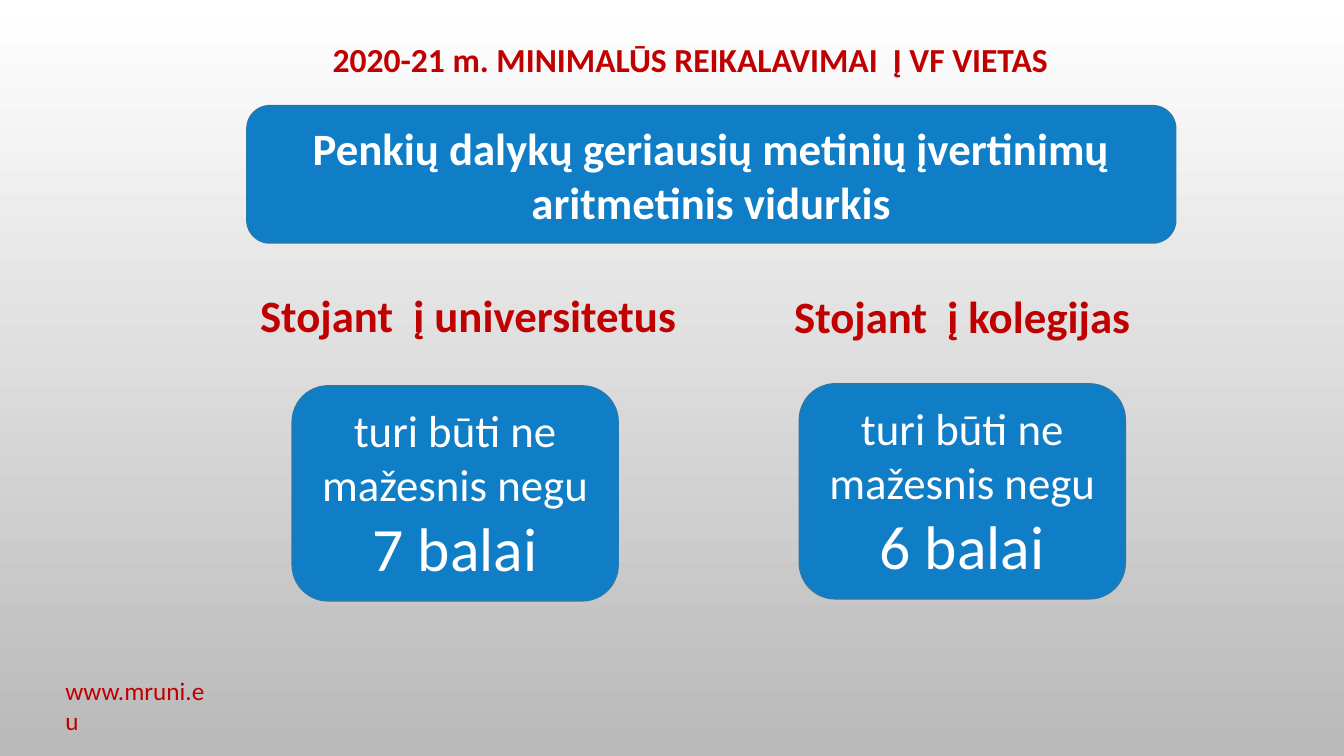
from pptx import Presentation
from pptx.dml.color import RGBColor
from pptx.enum.shapes import MSO_SHAPE
from pptx.enum.text import MSO_ANCHOR, PP_ALIGN
from pptx.util import Inches, Pt

ROUNDED = MSO_SHAPE.ROUNDED_RECTANGLE
LEFT, CENTER = PP_ALIGN.LEFT, PP_ALIGN.CENTER
TOP, MIDDLE = MSO_ANCHOR.TOP, MSO_ANCHOR.MIDDLE

# Content
TITLE = "2020-21 m. MINIMALŪS REIKALAVIMAI  Į VF VIETAS "
CRITERION = "Penkių dalykų geriausių metinių įvertinimų aritmetinis vidurkis"
CONDITION = "turi būti ne mažesnis negu "
WEBSITE = "www.mruni.eu"
# Heading, its place, minimum score, left and top of the score box
REQUIREMENTS = [
    ("Stojant  į universitetus", (2.46, 2.81, 4.37, 0.64), "7 balai", 2.9, 3.83),
    ("Stojant  į kolegijas", (7.76, 2.82, 3.57, 0.64), "6 balai", 7.93, 3.81),
]

# Style
FONT = "Calibri"
RED, WHITE, BLUE, BLUE_EDGE = "C00000", "FFFFFF", "107EC6", "2379B0"
BACKGROUND = (WHITE, "B9B9B9")
SCORE_BOX = (3.23, 2.13)


def color(value):
    return RGBColor.from_string(value)


def write(shape, *runs, text_color=RED, bold=False, align=CENTER, anchor=TOP, wrap=True):
    """Fill a shape with one paragraph of (text, size) runs."""
    frame = shape.text_frame
    frame.word_wrap = wrap
    frame.vertical_anchor = anchor
    paragraph = frame.paragraphs[0]
    paragraph.alignment = align
    for text, size in runs:
        run = paragraph.add_run()
        run.text = text
        run.font.name = FONT
        run.font.size = Pt(size)
        run.font.bold = bold
        run.font.color.rgb = color(text_color)


def add_label(slide, place, text, size, **style):
    label = slide.shapes.add_textbox(*map(Inches, place))
    write(label, (text, size), **style)


def add_box(slide, place, *runs, **style):
    box = slide.shapes.add_shape(ROUNDED, *map(Inches, place))
    box.shadow.inherit = False
    box.fill.solid()
    box.fill.fore_color.rgb = color(BLUE)
    box.line.color.rgb = color(BLUE_EDGE)
    box.line.width = Pt(1.25)
    write(box, *runs, text_color=WHITE, anchor=MIDDLE, **style)


def main():
    presentation = Presentation()
    presentation.slide_width = Inches(13.33)
    presentation.slide_height = Inches(7.5)
    slide = presentation.slides.add_slide(presentation.slide_layouts[6])

    # Background fades from top to bottom
    fill = slide.background.fill
    fill.gradient()
    fill.gradient_angle = 270
    for stop, position, value in zip(fill.gradient_stops, (0, 1), BACKGROUND):
        stop.position = position
        stop.color.rgb = color(value)

    # Title and shared criterion
    add_label(slide, (2.25, 0.34, 9.27, 0.5), TITLE, 24, bold=True)
    add_box(slide, (2.45, 1.05, 9.21, 1.36), (CRITERION, 32), bold=True)

    # Requirement for each kind of school
    for heading, place, score, left, top in REQUIREMENTS:
        add_label(slide, place, heading, 32, bold=True, wrap=False)
        add_box(slide, (left, top, *SCORE_BOX), (CONDITION, 32), (score, 44))

    # Website
    add_label(slide, (0.55, 6.65, 1.58, 0.4), WEBSITE, 18, align=LEFT)

    presentation.save("out.pptx")


if __name__ == "__main__":
    main()
